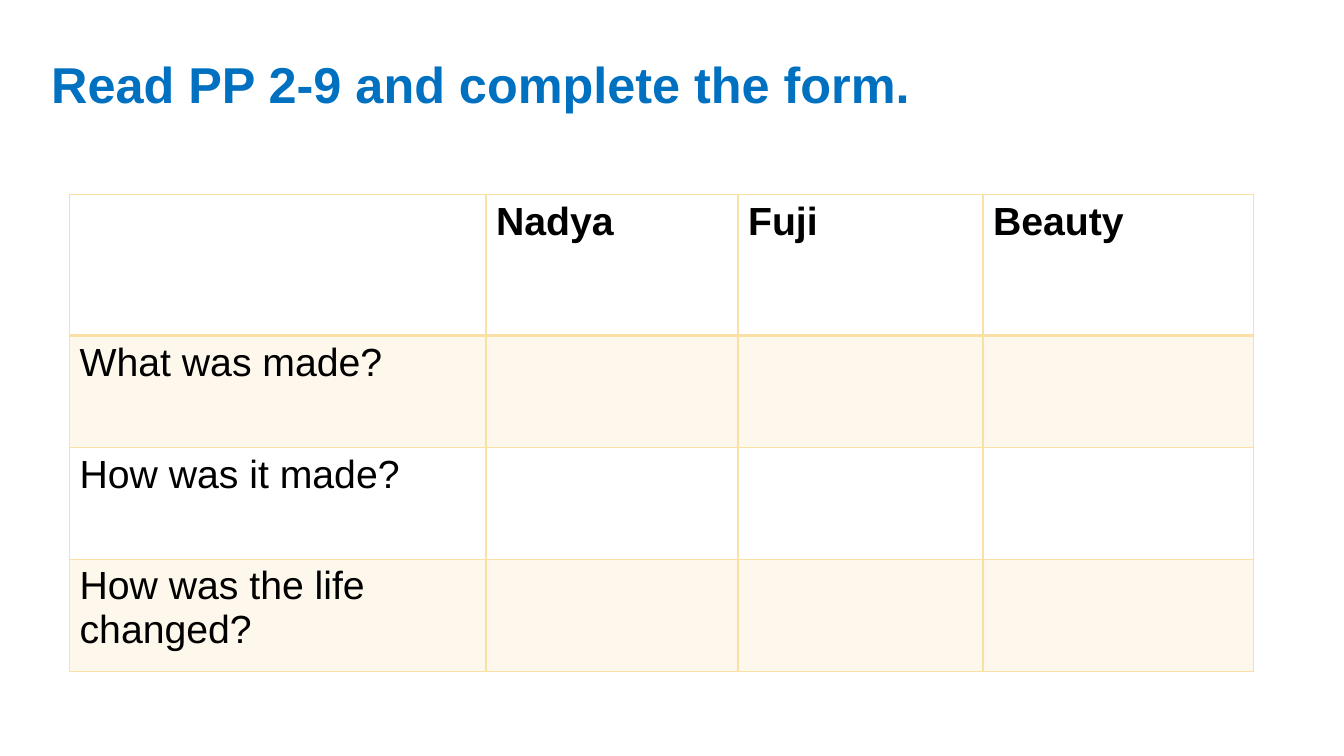
from dataclasses import dataclass

from lxml.etree import SubElement
from pptx import Presentation
from pptx.dml.color import RGBColor as Rgb
from pptx.enum.text import MSO_ANCHOR as Anchor
from pptx.oxml.ns import qn
from pptx.util import Inches, Pt


@dataclass(frozen=True)
class Theme:
    font: str = "Arial"
    title: str = "0070C0"
    ink: str = "000000"
    gold: str = "FAE0A4"
    tint: int = 20
    big: int = 36
    body: int = 28


THEME = Theme()
COLS = (4.13, 2.5, 2.43, 2.68)
ROWS = (1.4, 1.11, 1.11, 1.11)
NAMES = ("Nadya", "Fuji", "Beauty")
ASKS = ("What was made?", "How was it made?", "How was the life changed?")


def add_run(para, text, size, color, bold):
    run = para.add_run()
    run.text = text
    font = run.font
    font.name, font.size, font.bold = THEME.font, Pt(size), bold
    font.color.rgb = Rgb.from_string(color)


def add_title(slide, text):
    box = slide.shapes.add_textbox(Inches(0.41), Inches(0.27), Inches(10.02), Inches(1.18))
    frame = box.text_frame
    frame.word_wrap = True
    frame.vertical_anchor = Anchor.MIDDLE
    para = frame.paragraphs[0]
    para.line_spacing = 0.9
    add_run(para, text, THEME.big, THEME.title, True)


def add_edge(cell, side, width):
    line = SubElement(cell._tc.get_or_add_tcPr(), qn(f"a:ln{side}"), w=str(Pt(width)))
    fill = SubElement(line, qn("a:solidFill"))
    SubElement(fill, qn("a:srgbClr"), val=THEME.gold)


def tint_cell(cell):
    """Fill the cell with a sheer wash of gold."""
    cell.fill.solid()
    cell.fill.fore_color.rgb = Rgb.from_string(THEME.gold)
    color = cell._tc.tcPr.find(qn("a:solidFill")).find(qn("a:srgbClr"))
    SubElement(color, qn("a:alpha"), val=str(THEME.tint * 1000))


def style_cell(cell, row):
    for side in "LRTB":
        thick = (row, side) in ((0, "B"), (1, "T"))
        add_edge(cell, side, 2 if thick else 1)
    if row % 2:
        tint_cell(cell)
    else:
        cell.fill.background()


def add_form(slide):
    frame = slide.shapes.add_table(
        len(ROWS), len(COLS), Inches(0.69), Inches(1.93),
        Inches(sum(COLS)), Inches(sum(ROWS)))
    table = frame.table
    table.first_row = table.horz_banding = False
    for col, width in zip(table.columns, COLS):
        col.width = Inches(width)
    for row, height in zip(table.rows, ROWS):
        row.height = Inches(height)

    blanks = ("",) * len(NAMES)
    grid = [("", *NAMES)] + [(ask, *blanks) for ask in ASKS]
    for r, texts in enumerate(grid):
        for c, text in enumerate(texts):
            cell = table.cell(r, c)
            style_cell(cell, r)
            if text:
                para = cell.text_frame.paragraphs[0]
                add_run(para, text, THEME.body, THEME.ink, r == 0)


def main():
    deck = Presentation()
    deck.slide_width, deck.slide_height = Inches(13.33), Inches(7.5)
    slide = deck.slides.add_slide(deck.slide_layouts[6])
    add_title(slide, "Read PP 2-9 and complete the form.")
    add_form(slide)
    deck.save("out.pptx")


if __name__ == "__main__":
    main()
